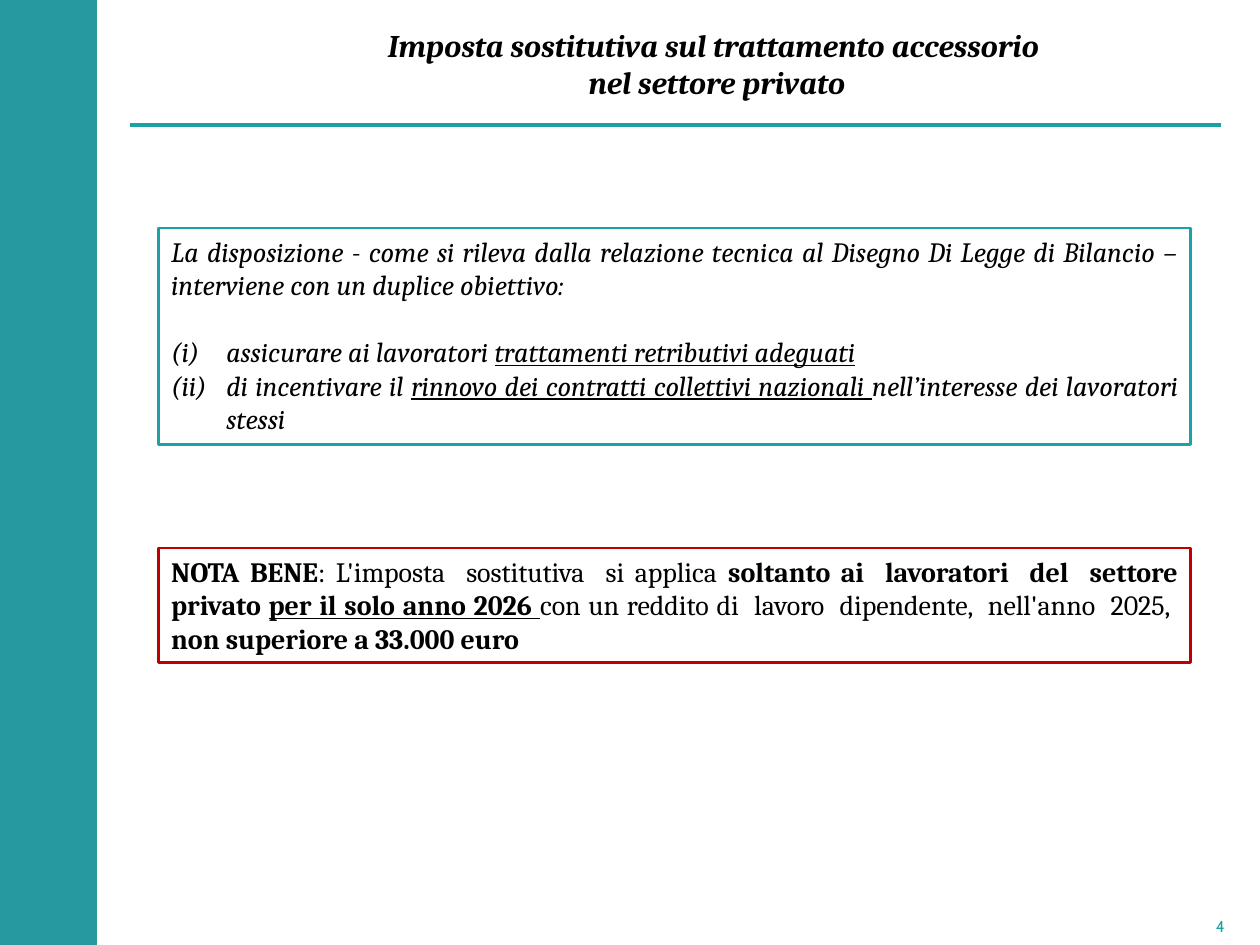
from pptx import Presentation
from pptx.dml.color import RGBColor
from pptx.enum.shapes import MSO_CONNECTOR as Link, MSO_SHAPE as Shape
from pptx.enum.text import MSO_ANCHOR as Anchor, MSO_AUTO_SIZE as Fit, PP_ALIGN as Align
from pptx.oxml.ns import qn
from pptx.util import Pt

TEAL = RGBColor(0x1B, 0xA2, 0xA7)
BAND = RGBColor(0x25, 0x99, 0x9D)
RED = RGBColor(0xC0, 0x00, 0x00)
BLACK = RGBColor(0x00, 0x00, 0x00)

# A paragraph is a list of (text, marks) runs; marks: b bold, i italic, u underline.
TITLE = [
    [("Imposta sostitutiva sul trattamento accessorio ", "bi")],
    [("nel settore privato", "bi")],
]
AIMS = [
    [("La disposizione - come si rileva dalla relazione tecnica al Disegno Di "
      "Legge di Bilancio – interviene con un duplice obiettivo:", "i")],
    [("assicurare ai lavoratori ", "i"),
     ("trattamenti retributivi adeguati", "iu")],
    [("di incentivare il ", "i"),
     ("rinnovo dei contratti collettivi nazionali ", "iu"),
     ("nell’interesse dei lavoratori stessi", "i")],
]
NOTE = [
    [("NOTA BENE", "b"),
     (": L'imposta  sostitutiva  si applica ", ""),
     ("soltanto ai  lavoratori  del  settore privato ", "b"),
     ("per il solo anno 2026 ", "bu"),
     ("con un reddito di  lavoro  dipendente,  nell'anno  2025,  ", ""),
     ("non superiore a 33.000 euro", "b")],
]
WIDE, HIGH = 720, 540
LEFT, SPAN = 90.7, 589.7
BOXES = [(130.3, 123.8, TEAL, AIMS), (313.2, 65.5, RED, NOTE)]
HANG = 31.5
GAP = 19


def write(shape, paras, size=16, font="Cambria", color=BLACK, align=Align.JUSTIFY,
          anchor=Anchor.TOP, fit=Fit.NONE):
    frame = shape.text_frame
    frame.word_wrap = True
    frame.auto_size = fit
    frame.vertical_anchor = anchor
    for n, runs in enumerate(paras):
        para = frame.paragraphs[0] if n == 0 else frame.add_paragraph()
        para.alignment = align
        for text, marks in runs:
            run = para.add_run()
            run.text = text
            face = run.font
            face.size, face.name = Pt(size), font
            face.color.rgb = color
            face.bold, face.italic = "b" in marks, "i" in marks
            face.underline = "u" in marks
    return frame


def number(para):
    """Give a paragraph a hanging (i), (ii) number."""
    props = para._p.get_or_add_pPr()
    props.set("marL", str(Pt(HANG)))
    props.set("indent", str(-Pt(HANG)))
    mark = props.makeelement(qn("a:buAutoNum"), {"type": "romanLcParenBoth"})
    props.append(mark)


def place(shape, *spot):
    shape.left, shape.top, shape.width, shape.height = map(Pt, spot)


def block(slide, *spot):
    shape = slide.shapes.add_shape(Shape.RECTANGLE, *map(Pt, spot))
    shape.shadow.inherit = False
    return shape


def main():
    deck = Presentation()
    deck.slide_width, deck.slide_height = Pt(WIDE), Pt(HIGH)
    slide = deck.slides.add_slide(deck.slide_layouts[5])

    band = block(slide, 0, 0, 55.4, HIGH)
    band.fill.solid()
    band.fill.fore_color.rgb = BAND
    band.line.fill.background()

    title = slide.shapes.title
    place(title, 133.2, 8.6, 553, 55.4)
    write(title, TITLE, size=18, align=Align.CENTER, anchor=Anchor.MIDDLE)

    rule = slide.shapes.add_connector(Link.STRAIGHT, Pt(74.2), Pt(71.3), Pt(697.7), Pt(71.3))
    rule.line.color.rgb = TEAL
    rule.line.width = Pt(2.25)
    props = rule._element.spPr
    props.append(props.makeelement(qn("a:effectLst"), {}))

    for top, high, color, paras in BOXES:
        box = block(slide, LEFT, top, SPAN, high)
        box.fill.background()
        box.line.color.rgb = color
        box.line.width = Pt(1.5)
        frame = write(box, paras, fit=Fit.SHAPE_TO_FIT_TEXT)
        items = frame.paragraphs[1:]
        for item in items:
            number(item)
        if items:
            frame.paragraphs[0].space_after = Pt(GAP)

    page = slide.shapes.add_textbox(Pt(674.6), Pt(518.4), Pt(45.4), Pt(21.6))
    write(page, [[("4", "")]], size=9, font="Cabin", color=TEAL,
          align=Align.CENTER, anchor=Anchor.MIDDLE)

    deck.save("out.pptx")


if __name__ == "__main__":
    main()
